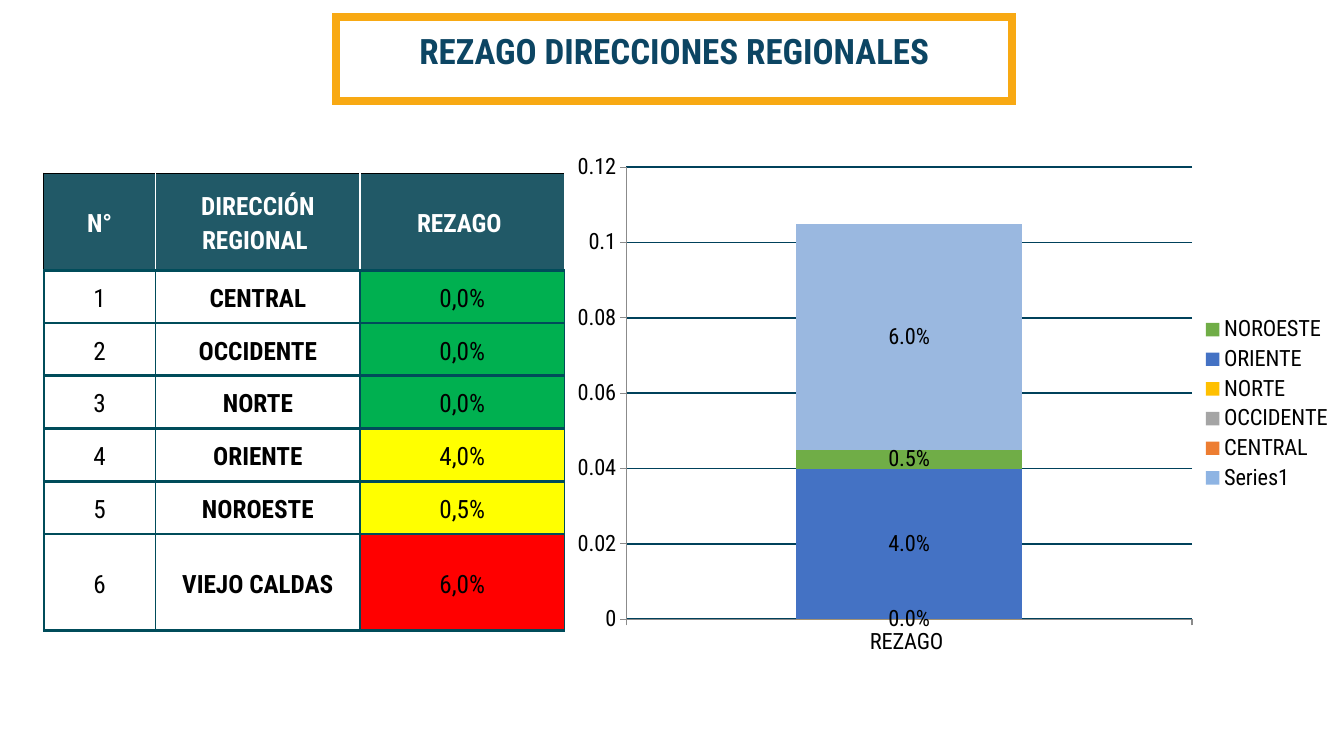
"""Build the slide on backlog by regional office: a table and a stacked column."""
from lxml import etree
from pptx import Presentation
from pptx.chart.data import CategoryChartData
from pptx.dml.color import RGBColor
from pptx.enum.chart import XL_CHART_TYPE, XL_LEGEND_POSITION, XL_TICK_MARK
from pptx.enum.shapes import MSO_SHAPE
from pptx.enum.text import MSO_ANCHOR, MSO_AUTO_SIZE, PP_ALIGN
from pptx.oxml import parse_xml
from pptx.oxml.ns import nsdecls, qn
from pptx.util import Pt

STACKED = XL_CHART_TYPE.COLUMN_STACKED
RIGHT = XL_LEGEND_POSITION.RIGHT
OUT, NONE = XL_TICK_MARK.OUTSIDE, XL_TICK_MARK.NONE
RECT = MSO_SHAPE.RECTANGLE
TOP, MIDDLE = MSO_ANCHOR.TOP, MSO_ANCHOR.MIDDLE
NO_FIT = MSO_AUTO_SIZE.NONE
CENTER = PP_ALIGN.CENTER

FONT = "Roboto Condensed"
COLORS = {
    "navy": "0C4563", "gold": "F8A913", "head": "215967", "edge": "004C5A",
    "grid": "00415B", "axis": "8B8B8B", "white": "FFFFFF", "black": "000000",
    "low": "00B050", "mid": "FFFF00", "high": "FF0000",
    "pale": "8EB4E3", "orange": "ED7D31", "gray": "A5A5A5", "amber": "FFC000",
    "blue": "4472C4", "green": "70AD47", "sky": "9AB8E0",
}
TITLE = "REZAGO DIRECCIONES REGIONALES "
HEADS = ["N°", "DIRECCIÓN REGIONAL ", "REZAGO "]
ROWS = [
    ("CENTRAL", "0,0%", "low"),
    ("OCCIDENTE", "0,0%", "low"),
    ("NORTE", "0,0%", "low"),
    ("ORIENTE", "4,0%", "mid"),
    ("NOROESTE", "0,5%", "mid"),
    ("VIEJO CALDAS", "6,0%", "high"),
]
SERIES = [
    ("Series1", None, "pale", False),
    ("CENTRAL", 0, "orange", False),
    ("OCCIDENTE", 0, "gray", False),
    ("NORTE", 0, "amber", True),
    ("ORIENTE", 0.04, "blue", True),
    ("NOROESTE", 0.005, "green", True),
    ("VIEJO CALDAS", 0.06, "sky", True),
]
WIDTHS = [80, 146, 146]
TALL, SHORT = 69.2, 37.7
PLOT = {"x": 0.085, "y": 0.083, "w": 0.722, "h": 0.797}


def rgb(name):
    return RGBColor.from_string(COLORS[name])


def box(left, top, width, height):
    return Pt(left), Pt(top), Pt(width), Pt(height)


def write(frame, text, size=18, color="black", bold=False, space=1.15):
    frame.word_wrap = True
    para = frame.paragraphs[0]
    para.alignment = CENTER
    para.line_spacing = space
    para.space_before = Pt(0)
    run = para.add_run()
    run.text = text
    font = run.font
    font.name, font.size, font.bold = FONT, Pt(size), bold
    font.color.rgb = rgb(color)


def border(cell, sides):
    props = cell._tc.get_or_add_tcPr()
    for side, (color, width) in zip("LRTB", sides):
        props.append(parse_xml(
            f'<a:ln{side} {nsdecls("a")} w="{int(Pt(width))}"><a:solidFill>'
            f'<a:srgbClr val="{COLORS[color]}"/></a:solidFill></a:ln{side}>'))


def fill_cell(cell, text, fill, sides, **style):
    border(cell, sides)
    cell.fill.solid()
    cell.fill.fore_color.rgb = rgb(fill)
    cell.vertical_anchor = MIDDLE
    cell.margin_left = cell.margin_right = Pt(5)
    cell.margin_top = cell.margin_bottom = 0
    write(cell.text_frame, text, **style)


def add_title(slide):
    frame = slide.shapes.add_shape(RECT, *box(240, 12.3, 483, 59.7))
    frame.shadow.inherit = False
    frame.fill.background()
    frame.line.color.rgb = rgb("gold")
    frame.line.width = Pt(6)
    etree.SubElement(frame.line._get_or_add_ln(), qn("a:miter"), lim="800000")
    title = slide.shapes.title
    title.left, title.top, title.width, title.height = box(219, 21, 531, 39.6)
    text = title.text_frame
    text.auto_size = NO_FIT
    text.vertical_anchor = TOP
    write(text, TITLE, size=25, color="navy", bold=True, space=0.9)


def add_table(slide):
    high = 2 * TALL + SHORT * (len(ROWS) - 1)
    frame = slide.shapes.add_table(
        len(ROWS) + 1, len(WIDTHS), *box(31.2, 123.8, sum(WIDTHS), high))
    table = frame.table
    for col, width in zip(table.columns, WIDTHS):
        col.width = Pt(width)
    last = len(ROWS)
    for num, row in enumerate(table.rows):
        row.height = Pt(TALL if num in (0, last) else SHORT)
    rule, thin, thick = ("edge", 2.25), ("edge", 1), ("edge", 1.5)
    white, black = ("white", 1), ("black", 1)
    for col, text in enumerate(HEADS):
        sides = (white if col else black, white, black, rule)
        fill_cell(table.cell(0, col), text, "head", sides,
                  color="white", bold=True)
    for num, (name, value, level) in enumerate(ROWS, 1):
        for col, text in enumerate((str(num), name, value)):
            sides = (thin if col else thick, thick if col == 2 else thin,
                     rule, rule)
            fill_cell(table.cell(num, col), text,
                      level if col == 2 else "white", sides, bold=col == 1)


def add_chart(slide):
    data = CategoryChartData()
    data.categories = ["REZAGO "]
    for name, value, _, _ in SERIES:
        data.add_series(name, [value])
    chart = slide.shapes.add_chart(
        STACKED, *box(399.6, 85.7, 560, 405.4), data).chart
    chart.has_title = False
    chart.font.name, chart.font.size = FONT, Pt(16)
    chart.font.color.rgb = rgb("black")
    plot = chart.plots[0]
    plot.gap_width, plot.overlap = 150, 100
    plot.vary_by_categories = False
    for series, (_, _, color, label) in zip(plot.series, SERIES):
        series.format.fill.solid()
        series.format.fill.fore_color.rgb = rgb(color)
        if label:
            marks = series.data_labels
            marks.show_value = True
            marks.number_format = "0.0%"
            marks.number_format_is_linked = False
    scale = chart.value_axis
    scale.minimum_scale, scale.maximum_scale, scale.major_unit = 0, 0.12, 0.02
    grid = scale.major_gridlines.format.line
    grid.color.rgb = rgb("grid")
    grid.width = Pt(1.25)
    for axis in (scale, chart.category_axis):
        axis.major_tick_mark, axis.minor_tick_mark = OUT, NONE
        axis.format.line.color.rgb = rgb("axis")
        axis.format.line.width = Pt(0.75)
    chart.has_legend = True
    legend = chart.legend
    legend.position = RIGHT
    legend.include_in_layout = False
    hide = parse_xml(
        f'<c:legendEntry {nsdecls("c")}><c:idx val="{len(SERIES) - 1}"/>'
        '<c:delete val="1"/></c:legendEntry>')
    legend._element.insert(1, hide)
    area = chart._chartSpace.chart.plotArea
    for old in area.findall(qn("c:layout")):
        area.remove(old)
    modes = '<c:xMode val="edge"/><c:yMode val="edge"/>'
    sizes = "".join(f'<c:{key} val="{val}"/>' for key, val in PLOT.items())
    area.insert(0, parse_xml(
        f'<c:layout {nsdecls("c")}><c:manualLayout>'
        f'<c:layoutTarget val="inner"/>{modes}{sizes}'
        '</c:manualLayout></c:layout>'))


def main():
    deck = Presentation()
    deck.slide_width, deck.slide_height = Pt(960), Pt(540)
    slide = deck.slides.add_slide(deck.slide_layouts[5])
    add_title(slide)
    add_table(slide)
    add_chart(slide)
    deck.save("out.pptx")


if __name__ == "__main__":
    main()
